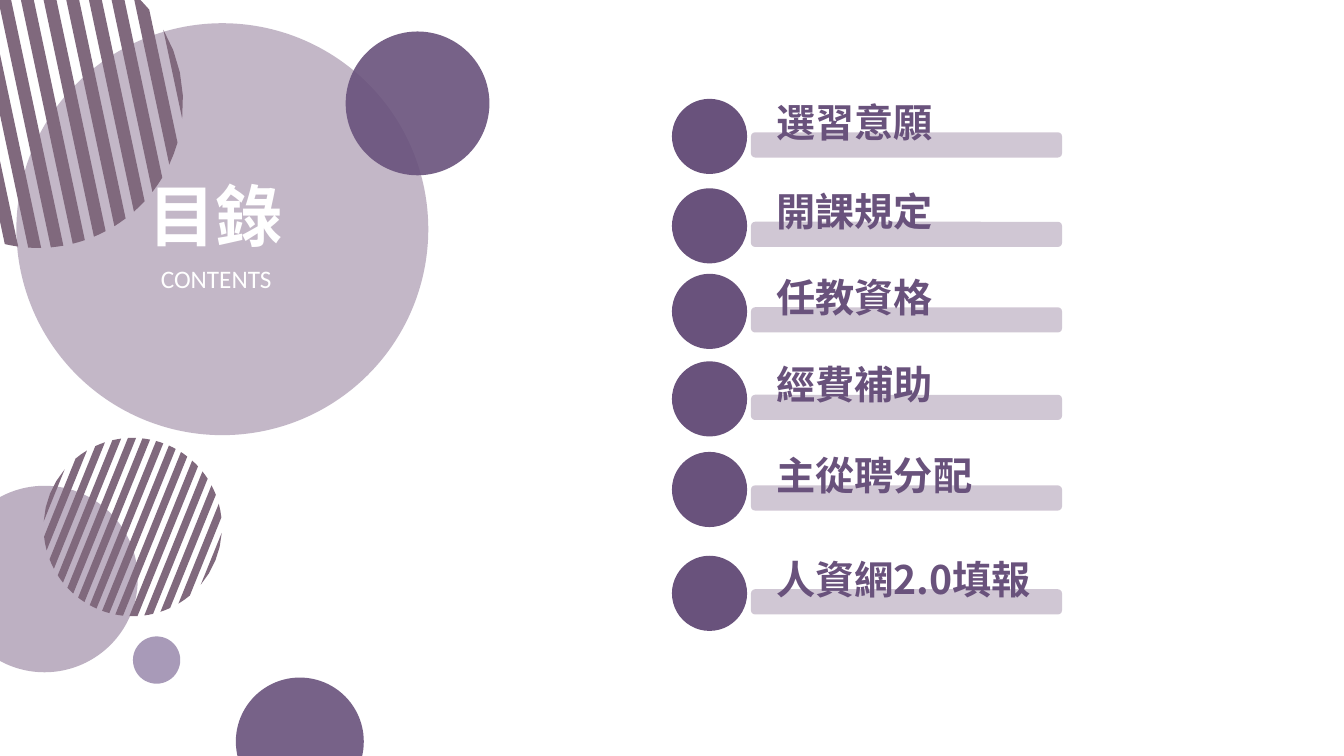
from dataclasses import dataclass
from math import acos, cos, radians, sin

from lxml import etree
from pptx import Presentation
from pptx.dml.color import RGBColor
from pptx.enum.shapes import MSO_SHAPE
from pptx.enum.text import MSO_ANCHOR, PP_ALIGN
from pptx.oxml.ns import qn
from pptx.util import Pt

OVAL = MSO_SHAPE.OVAL
ROUNDED = MSO_SHAPE.ROUNDED_RECTANGLE
LEFT = PP_ALIGN.LEFT
CENTER = PP_ALIGN.CENTER
MIDDLE = MSO_ANCHOR.MIDDLE


@dataclass(frozen=True)
class Theme:
    """Colours, fonts and type sizes of the slide."""
    plum: str = "69527C"
    mauve: str = "BDB0C2"
    lilac: str = "9F90B1"
    stripe: str = "80697D"
    white: str = "FFFFFF"
    heading_font: str = "Noto Sans CJK SC"
    body_font: str = "Calibri"
    title_size: int = 48
    item_size: int = 28
    subtitle_size: int = 18


class ContentsSlide:
    """Draws styled elements on one slide, with lengths in points."""

    def __init__(self, slide, theme):
        self.slide = slide
        self.shapes = slide.shapes
        self.theme = theme

    def start_group(self):
        self.shapes = self.slide.shapes.add_group_shape().shapes

    def end_group(self):
        self.shapes = self.slide.shapes

    def paint(self, shape, color, opacity=100):
        shape.shadow.inherit = False
        shape.fill.solid()
        shape.fill.fore_color.rgb = RGBColor.from_string(color)
        shape.line.fill.background()
        if opacity < 100:
            tint = shape.element.spPr.find(f".//{qn('a:srgbClr')}")
            etree.SubElement(tint, qn("a:alpha"), val=str(opacity * 1000))

    def circle(self, left, top, diameter, color, opacity=100):
        disc = self.shapes.add_shape(OVAL, Pt(left), Pt(top), Pt(diameter), Pt(diameter))
        self.paint(disc, color, opacity)

    def bar(self, left, top, width, height, color, opacity):
        band = self.shapes.add_shape(ROUNDED, Pt(left), Pt(top), Pt(width), Pt(height))
        self.paint(band, color, opacity)

    def striped_circle(self, center_x, center_y, radius, tilt, pitch, thickness, count=14):
        def rim(angle):
            turned = angle - radians(tilt)
            return (Pt(center_x + radius * cos(turned)),
                    Pt(center_y + radius * sin(turned)))

        first = -((count - 1) * pitch + thickness) / 2
        outlines = []
        for index in range(count):
            near = first + index * pitch
            start = acos(min(1, (near + thickness) / radius))
            end = acos(max(-1, near / radius))
            arc = [start, (start + end) / 2, end]
            outlines.append([rim(angle) for angle in arc + [-a for a in reversed(arc)]])

        builder = self.shapes.build_freeform(*outlines[0][0])
        for outline in outlines:
            if outline is not outlines[0]:
                builder.move_to(*outline[0])
            builder.add_line_segments(outline[1:], close=True)
        self.paint(builder.convert_to_shape(), self.theme.stripe)

    def text(self, wording, *, left, top, width, height, size, color, font,
             bold=False, align=LEFT):
        frame = self.shapes.add_textbox(Pt(left), Pt(top), Pt(width), Pt(height)).text_frame
        frame.word_wrap = True
        frame.vertical_anchor = MIDDLE
        paragraph = frame.paragraphs[0]
        paragraph.alignment = align
        run = paragraph.add_run()
        run.text = wording
        run.font.size = Pt(size)
        run.font.bold = bold
        run.font.name = font
        run.font.color.rgb = RGBColor.from_string(color)
        etree.SubElement(run.font._element, qn("a:ea"), typeface=font)

    def item(self, wording, top):
        theme = self.theme
        self.start_group()
        self.circle(480, top, 53.7, theme.plum)
        self.bar(536.4, top + 23.9, 222.2, 18, theme.mauve, 70)
        self.text(wording, left=547.6, top=top - 4.3, width=211, height=41,
                  size=theme.item_size, color=theme.plum,
                  font=theme.heading_font, bold=True)
        self.end_group()


def main():
    theme = Theme()
    deck = Presentation()
    deck.slide_width, deck.slide_height = Pt(960), Pt(540)
    contents = ContentsSlide(deck.slides.add_slide(deck.slide_layouts[6]), theme)

    contents.start_group()
    contents.circle(11.7, 16.6, 294.2, theme.mauve, 90)
    contents.striped_circle(27.1, 73.4, 103.7, tilt=12, pitch=15.84, thickness=9)
    contents.circle(246.9, 22.5, 102.7, theme.plum, 90)
    contents.circle(95, 454.6, 33.8, theme.lilac, 90)
    contents.circle(-34.8, 347, 133.2, theme.mauve)
    contents.striped_circle(94.8, 376.5, 63.7, tilt=-22, pitch=9.72, thickness=5.4)
    contents.circle(168.5, 484, 91.4, theme.plum, 90)
    contents.end_group()

    contents.text("目錄", left=74.9, top=120.7, width=158.4, height=65.5,
                  size=theme.title_size, color=theme.white,
                  font=theme.heading_font, bold=True, align=CENTER)
    contents.text("CONTENTS", left=79.2, top=184.3, width=150.5, height=28.8,
                  size=theme.subtitle_size, color=theme.white,
                  font=theme.body_font, align=CENTER)

    items = {"選習意願": 70.6, "開課規定": 134.5, "任教資格": 195.6,
             "經費補助": 258.1, "主從聘分配": 322.8, "人資網2.0填報": 397}
    for wording, top in items.items():
        contents.item(wording, top)

    deck.save("out.pptx")


if __name__ == "__main__":
    main()
